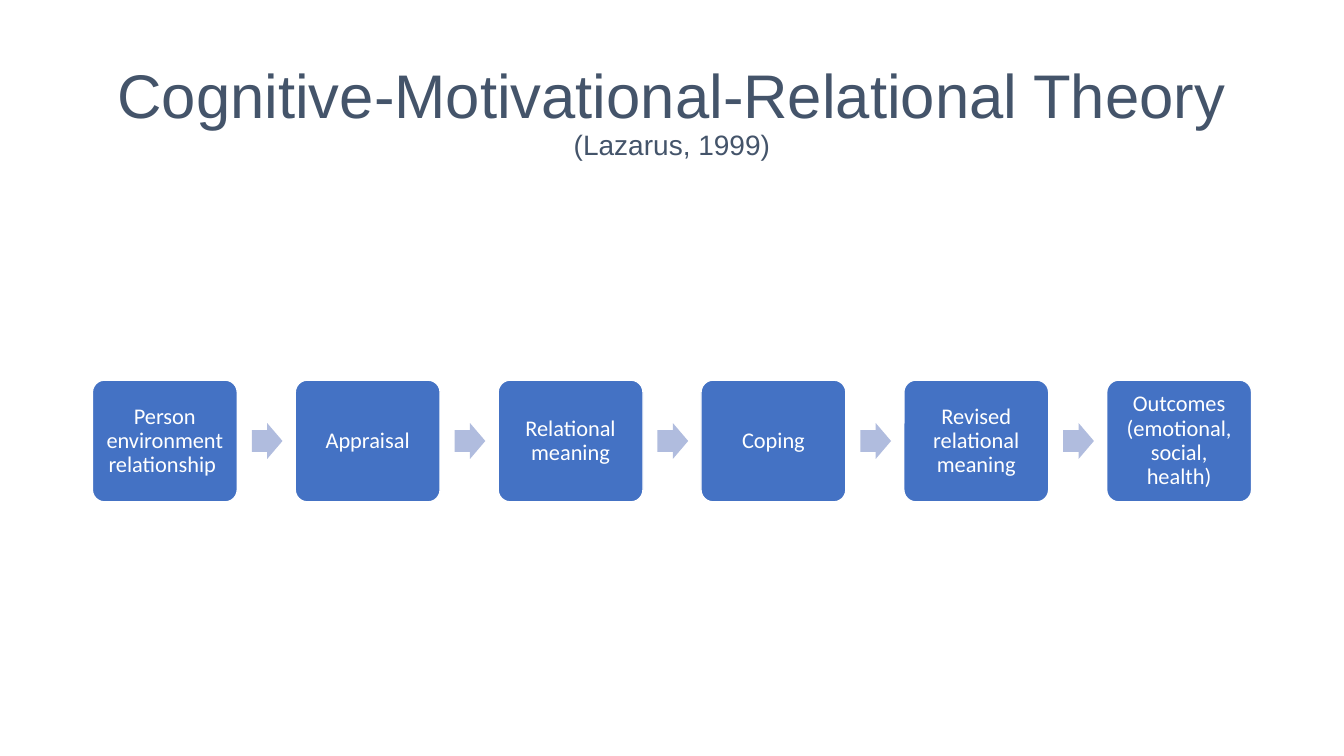
from pptx import Presentation
from pptx.dml.color import RGBColor
from pptx.enum import shapes, text
from pptx.util import Pt

STEPS = ["Person environment relationship ", "Appraisal",
         "Relational meaning", "Coping", "Revised relational meaning",
         "Outcomes (emotional, social, health)"]


def paint(target, color):
    """Give a font, or a solid fill or line, its colour."""
    if hasattr(target, "solid"):
        target.solid()
        target = target.fore_color
    else:
        target = target.color
    target.rgb = RGBColor.from_string(color)


def style(run, face, size, color):
    run.font.name = face
    run.font.size = Pt(size)
    paint(run.font, color)


def add_title(slide, left, top, width, height):
    title = slide.shapes.title
    title.left, title.top = Pt(left), Pt(top)
    title.width, title.height = Pt(width), Pt(height)
    frame = title.text_frame
    frame.text = "Cognitive-Motivational-Relational Theory\v(Lazarus, 1999)"
    frame.vertical_anchor = text.MSO_ANCHOR.MIDDLE
    para = frame.paragraphs[0]
    para.alignment = text.PP_ALIGN.CENTER
    para.line_spacing = 0.9
    for run, size in zip(para.runs, (44, 20)):
        style(run, "Arial", size, "44546A")


def add_step(slide, label, left, top, width, height):
    box = slide.shapes.add_shape(shapes.MSO_SHAPE.ROUNDED_RECTANGLE,
                                 Pt(left), Pt(top), Pt(width), Pt(height))
    box.adjustments[0] = 0.1
    box.shadow.inherit = False
    paint(box.fill, "4472C4")
    paint(box.line, "FFFFFF")
    box.line.width = Pt(1)
    frame = box.text_frame
    frame.text = label
    frame.word_wrap = True
    frame.vertical_anchor = text.MSO_ANCHOR.MIDDLE
    frame.margin_left = frame.margin_right = Pt(4.8)
    frame.margin_top = frame.margin_bottom = Pt(4.8)
    para = frame.paragraphs[0]
    para.alignment = text.PP_ALIGN.CENTER
    para.line_spacing = 0.9
    style(para.runs[0], "Calibri", 16, "FFFFFF")


def add_arrow(slide, left, middle, width, height):
    arrow = slide.shapes.add_shape(shapes.MSO_SHAPE.RIGHT_ARROW,
                                   Pt(left), Pt(middle - height / 2),
                                   Pt(width), Pt(height))
    arrow.adjustments[0] = 0.6
    arrow.adjustments[1] = 0.5
    arrow.shadow.inherit = False
    paint(arrow.fill, "B0BCDE")
    arrow.line.fill.background()


def add_flow(slide, left, top, width, height):
    """Spread the steps evenly over the box, with an arrow in each gap."""
    size = 103.5
    pitch = (width - size) / (len(STEPS) - 1)
    for i, label in enumerate(STEPS):
        x = left + i * pitch
        if i:
            add_arrow(slide, x - 31.05, top + height / 2, 21.9, 25.7)
        add_step(slide, label, x, top, size, height)


def main():
    deck = Presentation()
    deck.slide_width, deck.slide_height = Pt(960), Pt(540)
    slide = deck.slides.add_slide(deck.slide_layouts[5])
    add_title(slide, 66, 28.75, 828, 104.4)
    add_flow(slide, 66, 271.5, 828, 87)
    deck.save("out.pptx")


if __name__ == "__main__":
    main()
